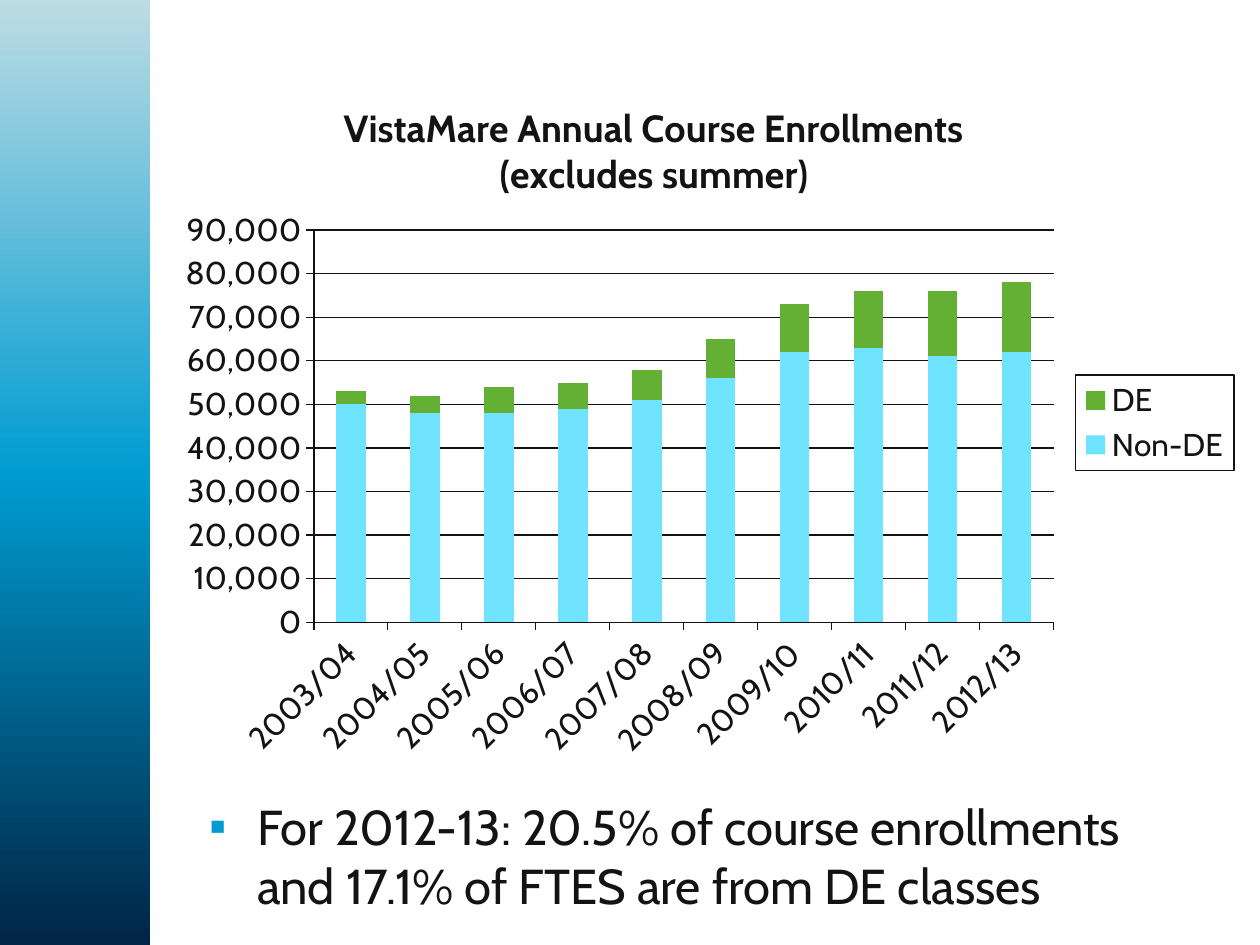
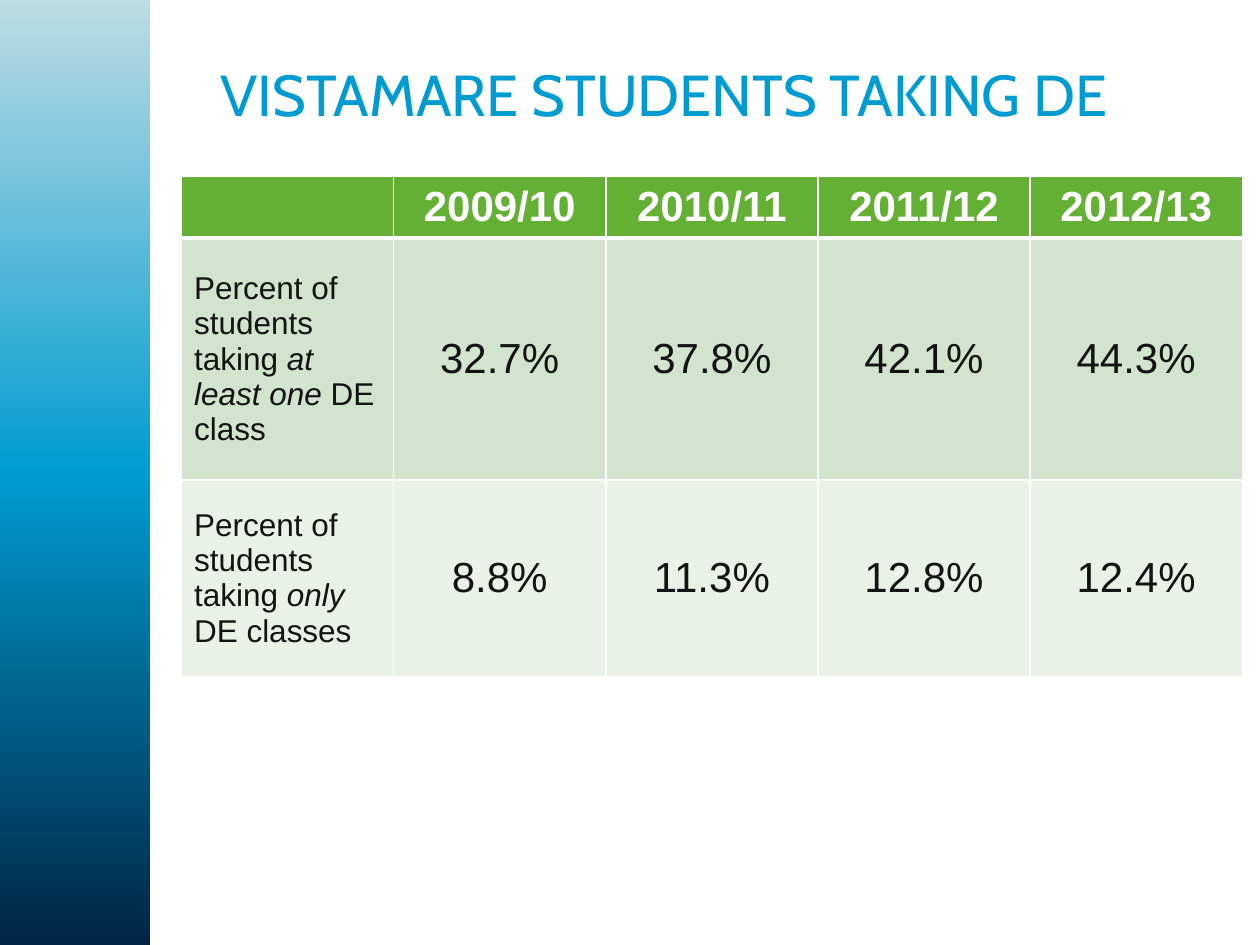
"""Build two slides on distance education (DE) enrollments."""
from copy import deepcopy
from dataclasses import dataclass

from lxml.etree import SubElement
from pptx import Presentation
from pptx.chart.data import CategoryChartData
from pptx.dml.color import RGBColor
from pptx.enum.chart import XL_CHART_TYPE, XL_LEGEND_POSITION, XL_TICK_MARK
from pptx.enum.shapes import MSO_SHAPE
from pptx.enum.text import MSO_ANCHOR, MSO_AUTO_SIZE, PP_ALIGN
from pptx.oxml.ns import qn
from pptx.util import Inches, Pt

TITLE_AND_CONTENT, TITLE_ONLY = 1, 5


@dataclass(frozen=True)
class Theme:
    ink: str = "131313"
    white: str = "FFFFFF"
    blue: str = "009CD1"
    navy: str = "002545"
    mist: str = "BDDCE4"
    sky: str = "70E3FF"
    green: str = "64B034"
    row_tints: tuple = ("D3E4CE", "EAF2E8")
    heading_font: str = "Cabin"
    table_font: str = "Arial"
    title_size: float = 33
    body_size: float = 28
    figure_size: float = 24
    chart_title_size: float = 21.6
    label_size: float = 18
    rule_width: float = 0.75
    border_width: float = 1
    header_border_width: float = 3


class SlideBuilder:
    def __init__(self, deck, theme):
        self.deck = deck
        self.theme = theme
        self.slide = None

    def new_slide(self, layout):
        self.slide = self.deck.slides.add_slide(self.deck.slide_layouts[layout])
        self.add_band()

    def style_font(self, font, size, color=None, name=None, bold=False):
        font.size = Pt(size)
        font.name = name or self.theme.heading_font
        font.bold = bold
        font.color.rgb = RGBColor.from_string(color or self.theme.ink)

    def style_line(self, line):
        line.color.rgb = RGBColor.from_string(self.theme.ink)
        line.width = Pt(self.theme.rule_width)

    def place(self, box, left, top, width, height):
        box.left, box.top = Inches(left), Inches(top)
        box.width, box.height = Inches(width), Inches(height)

    def add_band(self):
        band = self.slide.shapes.add_shape(
            MSO_SHAPE.RECTANGLE, 0, 0, Inches(1.19), self.deck.slide_height)
        band.shadow.inherit = False
        band.line.fill.background()
        band.fill.gradient()
        band.fill.gradient_angle = 90
        stop_list = next(band._element.spPr.iter(qn("a:gsLst")))
        stop_list.append(deepcopy(stop_list[0]))
        colors = (self.theme.navy, self.theme.blue, self.theme.mist)
        for index, (stop, color) in enumerate(zip(band.fill.gradient_stops, colors)):
            stop.position = index / 2
            stop.color.rgb = RGBColor.from_string(color)

    def set_title(self, text):
        title = self.slide.shapes.title
        self.place(title, 1.65, 0.41, 7.85, 0.66)
        frame = title.text_frame
        frame.text = text
        frame.auto_size = MSO_AUTO_SIZE.NONE
        frame.vertical_anchor = MSO_ANCHOR.MIDDLE
        para = frame.paragraphs[0]
        para.alignment = PP_ALIGN.LEFT
        self.style_font(para.runs[0].font, self.theme.title_size, self.theme.blue)

    def remove_title(self):
        title = self.slide.shapes.title._element
        title.getparent().remove(title)

    def set_bullet(self, text):
        body = self.slide.placeholders[1]
        self.place(body, 1.56, 6.27, 7.85, 0.62)
        frame = body.text_frame
        frame.text = text
        frame.auto_size = MSO_AUTO_SIZE.NONE
        para = frame.paragraphs[0]
        self.style_font(para.runs[0].font, self.theme.body_size)
        properties = para._p.get_or_add_pPr()
        properties.set("marL", str(Inches(0.38)))
        properties.set("indent", str(Inches(-0.38)))
        color = SubElement(properties, qn("a:buClr"))
        SubElement(color, qn("a:srgbClr"), val=self.theme.blue)
        SubElement(properties, qn("a:buFont"), typeface=self.theme.table_font)
        SubElement(properties, qn("a:buChar"), char="▪")

    def set_chart_layout(self, element, index, inner=False, **fractions):
        for previous in element.findall(qn("c:layout")):
            element.remove(previous)
        layout = SubElement(element, qn("c:layout"))
        element.insert(index, layout)
        manual = SubElement(layout, qn("c:manualLayout"))
        if inner:
            SubElement(manual, qn("c:layoutTarget"), val="inner")
        for side in ("x", "y"):
            SubElement(manual, qn(f"c:{side}Mode"), val="edge")
        for side, fraction in fractions.items():
            SubElement(manual, qn(f"c:{side}"), val=str(fraction))

    def add_stacked_chart(self, title_lines, categories, series_values, colors):
        data = CategoryChartData(number_format="#,##0")
        data.categories = categories
        for name, values in series_values.items():
            data.add_series(name, values)
        chart = self.slide.shapes.add_chart(
            XL_CHART_TYPE.COLUMN_STACKED, Inches(1.31), Inches(0.57),
            Inches(8.56), Inches(5.56), data).chart
        self.style_font(chart.font, self.theme.label_size)
        plot = chart.plots[0]
        plot.gap_width, plot.overlap = 150, 100
        plot.vary_by_categories = False
        for series, color in zip(plot.series, colors):
            series.format.fill.solid()
            series.format.fill.fore_color.rgb = RGBColor.from_string(color)
        self.set_chart_layout(chart._chartSpace.chart.plotArea, 0, inner=True,
                              x=0.138, y=0.226, w=0.686, h=0.56)
        self.style_axes(chart)
        self.style_chart_title(chart, title_lines)
        self.style_legend(chart)

    def style_axes(self, chart):
        for axis in (chart.category_axis, chart.value_axis):
            axis.major_tick_mark = XL_TICK_MARK.OUTSIDE
            axis.minor_tick_mark = XL_TICK_MARK.NONE
            self.style_line(axis.format.line)
            self.style_font(axis.tick_labels.font, self.theme.label_size)
        label_body = chart.category_axis._element.find(qn("c:txPr")).find(qn("a:bodyPr"))
        label_body.set("rot", "-2700000")
        values = chart.value_axis
        values.minimum_scale, values.maximum_scale = 0, 90000
        values.major_unit = 10000
        values.tick_labels.number_format = "#,##0"
        values.tick_labels.number_format_is_linked = False
        self.style_line(values.major_gridlines.format.line)

    def style_chart_title(self, chart, lines):
        frame = chart.chart_title.text_frame
        frame.text = "\n".join(lines)
        for para in frame.paragraphs:
            para.alignment = PP_ALIGN.CENTER
            self.style_font(para.runs[0].font, self.theme.chart_title_size, bold=True)
        self.set_chart_layout(chart.chart_title._element, 1, x=0.162, y=0.04)

    def style_legend(self, chart):
        chart.has_legend = True
        legend = chart.legend
        legend.position = XL_LEGEND_POSITION.RIGHT
        legend.include_in_layout = False
        self.style_font(legend.font, self.theme.label_size)
        self.set_chart_layout(legend._element, 1, x=0.844, y=0.433, w=0.147, h=0.136)
        border = deepcopy(chart.value_axis._element.find(qn("c:spPr")))
        legend._element.find(qn("c:txPr")).addprevious(border)

    def set_borders(self, cell, **widths):
        properties = cell._tc.get_or_add_tcPr()
        for index, side in enumerate("LRTB"):
            width = Pt(widths.get(side, self.theme.border_width))
            border = SubElement(properties, qn(f"a:ln{side}"), w=str(width))
            properties.insert(index, border)
            fill = SubElement(border, qn("a:solidFill"))
            SubElement(fill, qn("a:srgbClr"), val=self.theme.white)

    def fill_cell(self, cell, spans, fill, size, color, bold, centered):
        cell.fill.solid()
        cell.fill.fore_color.rgb = RGBColor.from_string(fill)
        cell.vertical_anchor = MSO_ANCHOR.MIDDLE
        para = cell.text_frame.paragraphs[0]
        para.alignment = PP_ALIGN.CENTER if centered else PP_ALIGN.LEFT
        for index, text in enumerate(spans):
            span = para.add_run()
            span.text = text
            self.style_font(span.font, size, color, self.theme.table_font, bold)
            span.font.italic = index == 1

    def add_percent_table(self, years, rows):
        theme = self.theme
        heights = (0.49, 1.92, 1.56)
        table = self.slide.shapes.add_table(
            len(rows) + 1, len(years) + 1, Inches(1.44), Inches(1.4),
            Inches(8.42), Inches(sum(heights))).table
        table.first_row = table.horz_banding = False
        for row, height in zip(table.rows, heights):
            row.height = Inches(height)
        thick = theme.header_border_width
        self.fill_cell(table.cell(0, 0), (), theme.green, theme.figure_size,
                       theme.white, True, True)
        for column, year in enumerate(years, 1):
            self.fill_cell(table.cell(0, column), (year,), theme.green,
                           theme.figure_size, theme.white, True, True)
        for index, (label, percents) in enumerate(rows, 1):
            tint = theme.row_tints[index - 1]
            self.fill_cell(table.cell(index, 0), label, tint, theme.label_size,
                           theme.ink, False, False)
            for column, percent in enumerate(percents, 1):
                self.fill_cell(table.cell(index, column), (percent,), tint,
                               theme.figure_size, theme.ink, False, True)
        edges = ({"B": thick}, {"T": thick}, {})
        for row, widths in zip(table.rows, edges):
            for cell in row.cells:
                self.set_borders(cell, **widths)


def build_enrollment_slide(builder):
    builder.new_slide(TITLE_AND_CONTENT)
    builder.remove_title()
    builder.set_bullet("For 2012-13: 20.5% of course enrollments and 17.1% of FTES "
                       "are from DE classes")
    years = [f"{year}/{(year + 1) % 100:02}" for year in range(2003, 2013)]
    enrollments = {
        "Non-DE": (50000, 48000, 48000, 49000, 51000,
                   56000, 62000, 63000, 61000, 62000),
        "DE": (3000, 4000, 6000, 6000, 7000,
               9000, 11000, 13000, 15000, 16000),
    }
    builder.add_stacked_chart(
        ("VistaMare Annual Course Enrollments", "(excludes summer)"),
        years, enrollments, (builder.theme.sky, builder.theme.green))


def build_students_slide(builder):
    builder.new_slide(TITLE_ONLY)
    builder.set_title("VISTAMARE STUDENTS TAKING DE")
    builder.add_percent_table(
        ("2009/10", "2010/11", "2011/12", "2012/13"),
        ((("Percent of students taking ", "at least one", " DE class"),
          ("32.7%", "37.8%", "42.1%", "44.3%")),
         (("Percent of students taking ", "only", " DE classes"),
          ("8.8%", "11.3%", "12.8%", "12.4%"))))


def main():
    deck = Presentation()
    deck.slide_width, deck.slide_height = Inches(10), Inches(7.5)
    builder = SlideBuilder(deck, Theme())
    build_enrollment_slide(builder)
    build_students_slide(builder)
    deck.save("out.pptx")


if __name__ == "__main__":
    main()
